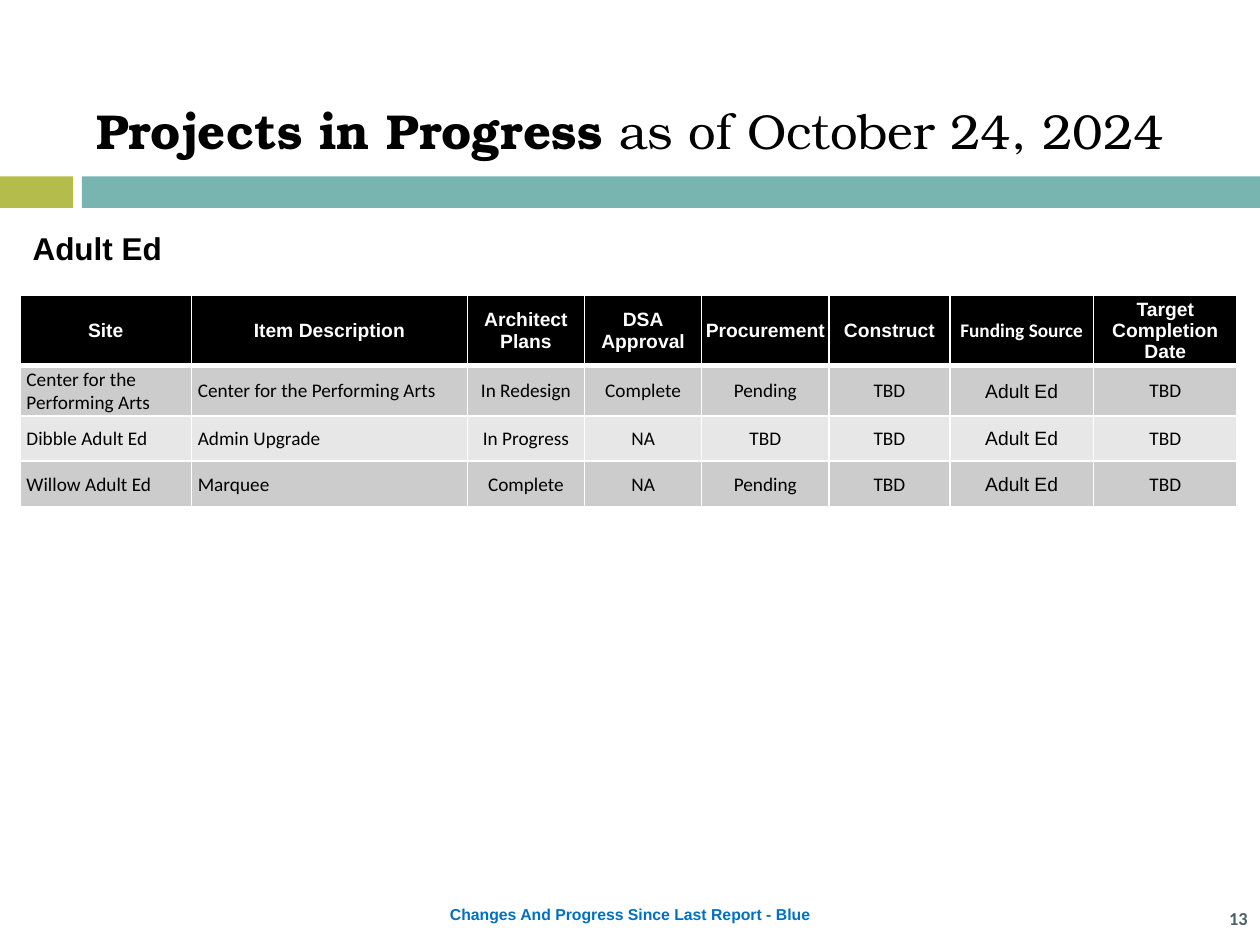
"""Build the Adult Ed slide of projects in progress."""
from lxml.etree import SubElement
from pptx import Presentation
from pptx.dml.color import RGBColor
from pptx.enum.shapes import MSO_SHAPE
from pptx.enum.text import MSO_ANCHOR, PP_ALIGN
from pptx.oxml.ns import qn
from pptx.util import Inches, Pt

BLACK = RGBColor(0x00, 0x00, 0x00)
WHITE = RGBColor(0xFF, 0xFF, 0xFF)
OLIVE = RGBColor(0xB4, 0xBC, 0x4C)
TEAL = RGBColor(0x79, 0xB5, 0xB0)
BLUE = RGBColor(0x00, 0x70, 0xC0)
SLATE = RGBColor(0x4A, 0x60, 0x6E)
DARK_BAND = RGBColor(0xCC, 0xCC, 0xCC)
LIGHT_BAND = RGBColor(0xE7, 0xE7, 0xE7)

presentation = Presentation()
presentation.slide_width = Inches(10)
presentation.slide_height = Inches(7.5)
GRID = presentation.slide_width // 100


def area(*units):
    return [round(unit * GRID) for unit in units]


def write(paragraph, text, size=11, font="Arial", color=BLACK, bold=False, align=PP_ALIGN.CENTER):
    paragraph.alignment = align
    run = paragraph.add_run()
    run.text = text
    run.font.size = Pt(size)
    run.font.name = font
    run.font.bold = bold
    run.font.color.rgb = color


slide = presentation.slides.add_slide(presentation.slide_layouts[6])

for left, width, color in ((0, 5.8, OLIVE), (6.5, 93.5, TEAL)):
    bar = slide.shapes.add_shape(MSO_SHAPE.RECTANGLE, *area(left, 14, width, 2.5))
    bar.shadow.inherit = False
    bar.fill.solid()
    bar.fill.fore_color.rgb = color
    bar.line.fill.background()

title_runs = [("Projects in Progress ", True), ("as of October 24, 2024", False)]
text_boxes = [
    ((0, 5.5, 100, 9.7), MSO_ANCHOR.MIDDLE, title_runs, {"size": 28, "font": "TeX Gyre Bonum"}),
    ((0, 71.3, 100, 2.5), MSO_ANCHOR.TOP, [("Changes And Progress Since Last Report - Blue", True)],
     {"size": 9, "color": BLUE}),
    ((1.6, 17.7, 14.1, 4), MSO_ANCHOR.TOP, [("Adult Ed", True)], {"size": 18, "align": PP_ALIGN.LEFT}),
    ((40.7, 70.9, 59.3, 4), MSO_ANCHOR.MIDDLE, [("13", True)],
     {"size": 10.5, "font": "Calibri", "color": SLATE, "align": PP_ALIGN.RIGHT}),
]
for place, anchor, runs, style in text_boxes:
    text_frame = slide.shapes.add_textbox(*area(*place)).text_frame
    text_frame.word_wrap = True
    text_frame.vertical_anchor = anchor
    for text, bold in runs:
        write(text_frame.paragraphs[0], text, bold=bold, **style)

rows = [
    ["Site", "Item Description", "Architect\nPlans", "DSA\nApproval", "Procurement", "Construct",
     "Funding Source", "Target Completion Date"],
    ["Center for the\nPerforming Arts", "Center for the Performing Arts", "In Redesign", "Complete",
     "Pending", "TBD", "Adult Ed", "TBD"],
    ["Dibble Adult Ed", "Admin Upgrade", "In Progress", "NA", "TBD", "TBD", "Adult Ed", "TBD"],
    ["Willow Adult Ed", "Marquee", "Complete", "NA", "Pending", "TBD", "Adult Ed", "TBD"],
]
column_widths = area(13.6, 21.9, 9.3, 9.3, 10.1, 9.6, 11.4, 11.4)
row_heights = area(4.5, 4, 3.6, 3.6)
row_fills = [BLACK, DARK_BAND, LIGHT_BAND, DARK_BAND]
FUNDING = rows[0].index("Funding Source")

left, top = area(1.6, 23.4)
table = slide.shapes.add_table(
    len(rows), len(column_widths), left, top, sum(column_widths), sum(row_heights)
).table
for column, width in zip(table.columns, column_widths):
    column.width = width
for row, height in zip(table.rows, row_heights):
    row.height = height

for row_index, values in enumerate(rows):
    is_header = row_index == 0
    for column_index, value in enumerate(values):
        cell = table.cell(row_index, column_index)
        is_left = not is_header and column_index < 2
        cell.vertical_anchor = MSO_ANCHOR.MIDDLE
        cell.margin_left = Inches(0.05 if is_left else 0.01)
        cell.margin_right = cell.margin_top = Inches(0.01)
        cell.margin_bottom = 0
        for side in ("L", "R", "T", "B"):
            is_heavy = (row_index, side) in ((0, "B"), (1, "T"))
            border = SubElement(cell._tc.get_or_add_tcPr(), qn(f"a:ln{side}"), w=str(Pt(3 if is_heavy else 1)))
            SubElement(SubElement(border, qn("a:solidFill")), qn("a:srgbClr"), val=str(WHITE))
        cell.fill.solid()
        cell.fill.fore_color.rgb = row_fills[row_index]
        for line_index, line in enumerate(value.split("\n")):
            text_frame = cell.text_frame
            paragraph = text_frame.add_paragraph() if line_index else text_frame.paragraphs[0]
            write(
                paragraph, line,
                font="Arial" if is_header != (column_index == FUNDING) else "Calibri",
                color=WHITE if is_header else BLACK,
                bold=is_header,
                align=PP_ALIGN.LEFT if is_left else PP_ALIGN.CENTER,
            )

presentation.save("out.pptx")
